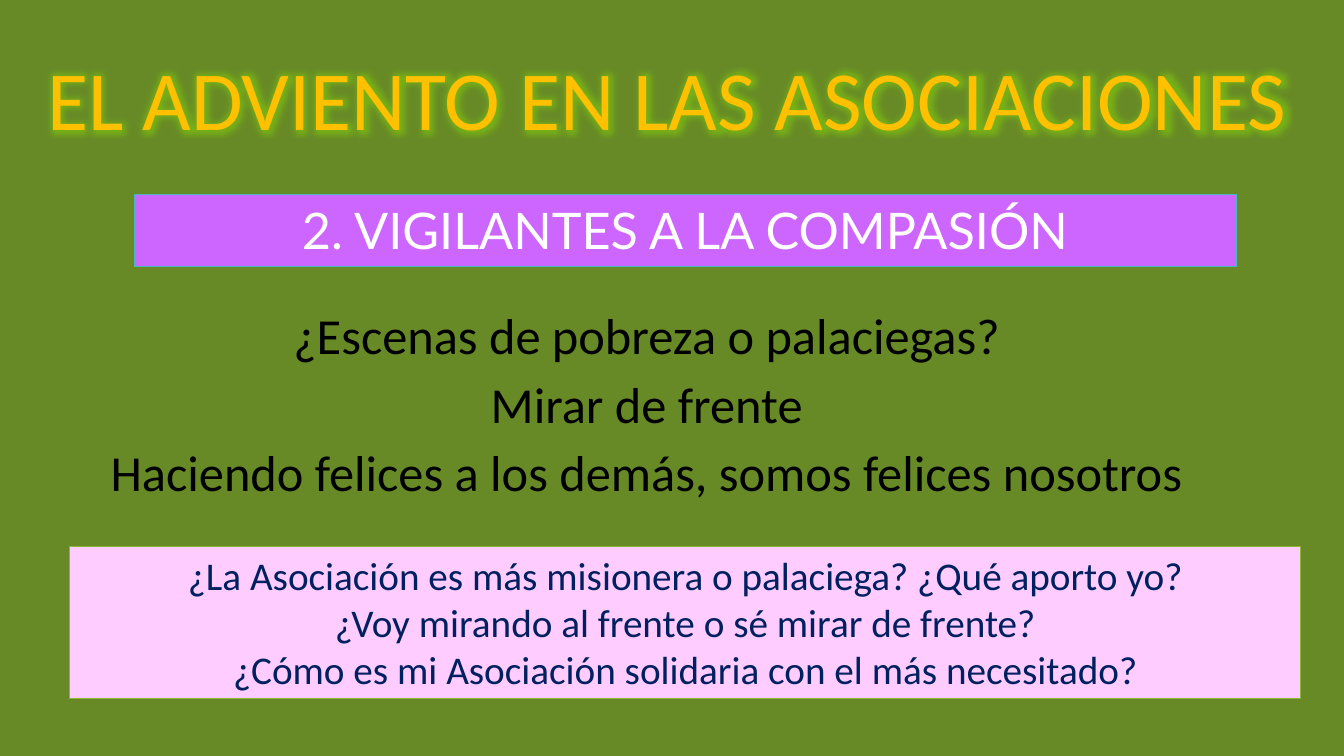
"""Build the Advent slide on compassion in associations."""
from dataclasses import dataclass

from lxml.etree import SubElement
from pptx import Presentation
from pptx.dml.color import RGBColor
from pptx.enum.shapes import MSO_SHAPE
from pptx.enum.text import MSO_ANCHOR, MSO_AUTO_SIZE, PP_ALIGN
from pptx.oxml.ns import qn
from pptx.util import Inches, Pt


@dataclass(frozen=True)
class Theme:
    background: str = "678A26"
    title: str = "FFC000"
    glow: str = "8FEB00"
    ideas: str = "000000"
    banner_fill: str = "CC66FF"
    banner_line: str = "4AB5C4"
    banner_text: str = "FFFFFF"
    questions_fill: str = "FFCCFF"
    questions_line: str = "8AB833"
    questions_text: str = "002060"
    body_font: str = "Calibri"
    banner_font: str = "Lato"
    title_size: int = 60
    heading_size: int = 36
    question_size: int = 28


THEME = Theme()


def rgb(value):
    return RGBColor.from_string(value)


def write_lines(frame, lines, font, size, color, anchor, spacing=1.0, before=0):
    frame.word_wrap = True
    frame.auto_size = MSO_AUTO_SIZE.NONE
    frame.vertical_anchor = anchor
    for index, line in enumerate(lines):
        paragraph = frame.add_paragraph() if index else frame.paragraphs[0]
        paragraph.alignment = PP_ALIGN.CENTER
        paragraph.line_spacing = spacing
        paragraph.space_before = Pt(before)
        run = paragraph.add_run()
        run.text = line
        run.font.name = font
        run.font.size = Pt(size)
        run.font.color.rgb = rgb(color)


def add_glow(run, color, radius, opacity):
    properties = run.font._element
    effects = SubElement(properties, qn("a:effectLst"))
    properties.find(qn("a:solidFill")).addnext(effects)
    glow = SubElement(effects, qn("a:glow"), rad=str(radius))
    tint = SubElement(glow, qn("a:srgbClr"), val=color)
    SubElement(tint, qn("a:alpha"), val=str(opacity * 1000))


def set_title(slide, text):
    title = slide.shapes.title
    title.left, title.top = Inches(0.33), Inches(0.32)
    title.width, title.height = Inches(12.57), Inches(1.2)
    write_lines(title.text_frame, [text], THEME.body_font, THEME.title_size,
                THEME.title, MSO_ANCHOR.BOTTOM, spacing=0.9)
    add_glow(title.text_frame.paragraphs[0].runs[0], THEME.glow, Inches(0.15), 40)


def add_ideas(slide, lines):
    ideas = slide.shapes.add_textbox(Inches(0.33), Inches(3.04), Inches(12.17), Inches(2.11))
    write_lines(ideas.text_frame, lines, THEME.body_font, THEME.heading_size,
                THEME.ideas, MSO_ANCHOR.TOP, spacing=0.9, before=10)


def add_panel(slide, box, lines, fill, outline, font, size, color):
    panel = slide.shapes.add_shape(MSO_SHAPE.RECTANGLE, *map(Inches, box))
    panel.shadow.inherit = False
    panel.fill.solid()
    panel.fill.fore_color.rgb = rgb(fill)
    panel.line.color.rgb = rgb(outline)
    panel.line.width = Pt(0.5)
    write_lines(panel.text_frame, lines, font, size, color, MSO_ANCHOR.TOP)


def main():
    deck = Presentation()
    deck.slide_width, deck.slide_height = Inches(13.33), Inches(7.5)
    slide = deck.slides.add_slide(deck.slide_layouts.get_by_name("Title Only"))
    slide.background.fill.solid()
    slide.background.fill.fore_color.rgb = rgb(THEME.background)

    set_title(slide, "EL ADVIENTO EN LAS ASOCIACIONES")
    add_ideas(slide, [
        "¿Escenas de pobreza o palaciegas?",
        "Mirar de frente",
        "Haciendo felices a los demás, somos felices nosotros",
    ])
    add_panel(slide, (1.33, 1.93, 10.93, 0.71), ["2. VIGILANTES A LA COMPASIÓN"],
              THEME.banner_fill, THEME.banner_line,
              THEME.banner_font, THEME.heading_size, THEME.banner_text)
    add_panel(slide, (0.69, 5.42, 12.21, 1.51), [
        "¿La Asociación es más misionera o palaciega? ¿Qué aporto yo?",
        "¿Voy mirando al frente o sé mirar de frente?",
        "¿Cómo es mi Asociación solidaria con el más necesitado?",
    ], THEME.questions_fill, THEME.questions_line,
        THEME.body_font, THEME.question_size, THEME.questions_text)
    deck.save("out.pptx")


if __name__ == "__main__":
    main()
